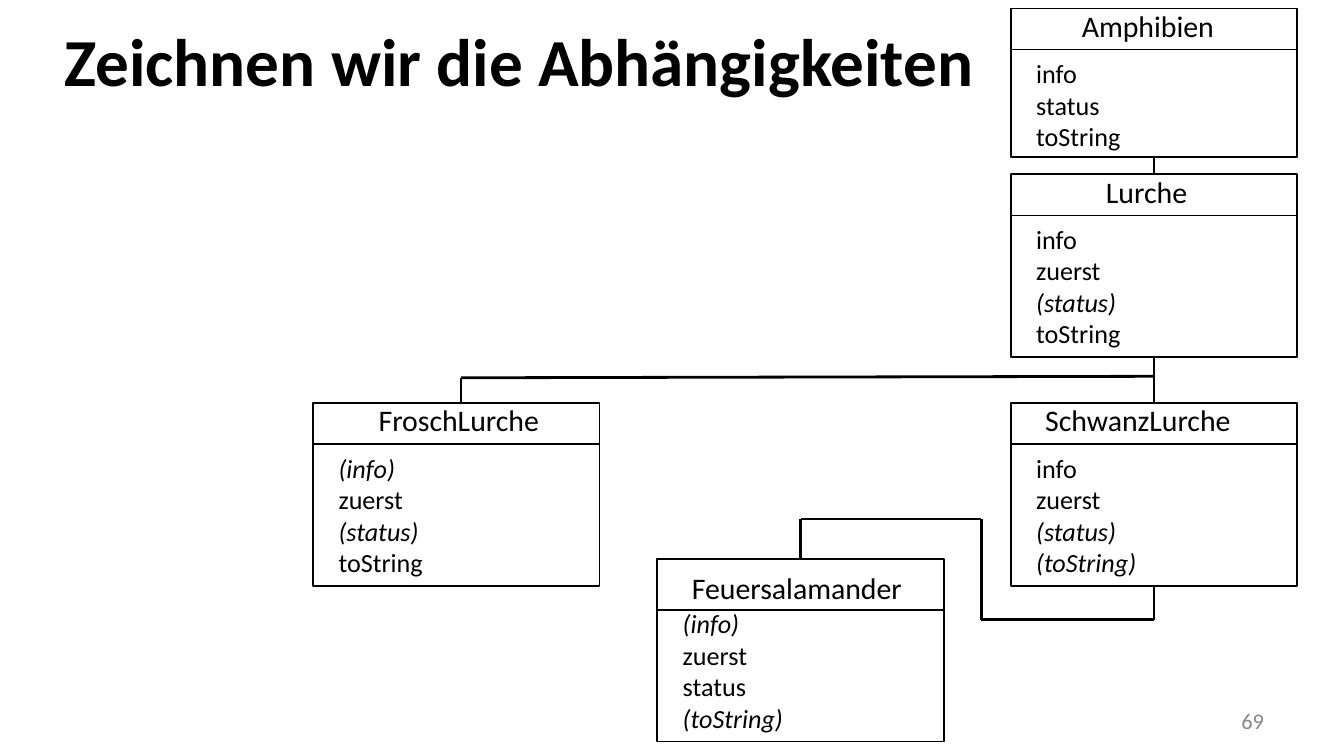
"""Class diagram of the amphibian hierarchy on one slide."""
from dataclasses import dataclass
from itertools import pairwise

import pptx
import pptx.dml.color
import pptx.enum.shapes
import pptx.enum.text
import pptx.oxml.ns
import pptx.util
from lxml import etree

Pt = pptx.util.Pt
Align = pptx.enum.text.PP_ALIGN
Anchor = pptx.enum.text.MSO_ANCHOR
COLORS = {"ink": "000000", "page": "888888"}
WIDTH = 153.4
TOP, BOTTOM = 0, 2


@dataclass
class Node:
    name: str
    left: float
    top: float
    indent: float
    items: list[str]
    height: float = 98
    head: float = 22
    shift: float = -4


def color(key: str):
    return pptx.dml.color.RGBColor.from_string(COLORS[key])


def text(slide, lines: list[str], left: float, top: float, width: float, height: float, *,
         size: float, ink: str = "ink", bold: bool = False, align=Align.LEFT,
         anchor=Anchor.TOP, inset: float = 7.2):
    box = slide.shapes.add_textbox(Pt(left), Pt(top), Pt(width), Pt(height))
    frame = box.text_frame
    frame.word_wrap = True
    frame.vertical_anchor = anchor
    frame.margin_left = frame.margin_right = Pt(inset)
    for i, line in enumerate(lines):
        para = frame.paragraphs[0] if i == 0 else frame.add_paragraph()
        para.alignment = align
        run = para.add_run()
        run.text = line
        run.font.name = "Calibri"
        run.font.size = Pt(size)
        run.font.bold = bold
        run.font.italic = line.startswith("(")
        run.font.color.rgb = color(ink)
    return box


def link(slide, start: tuple, end: tuple, weight: float = 1.5):
    line = slide.shapes.add_connector(
        pptx.enum.shapes.MSO_CONNECTOR.STRAIGHT, *map(Pt, start + end))
    line.line.color.rgb = color("ink")
    line.line.width = Pt(weight)
    etree.SubElement(line._element.spPr, pptx.oxml.ns.qn("a:effectLst"))
    return line


def draw(slide, node: Node):
    rect = slide.shapes.add_shape(
        pptx.enum.shapes.MSO_SHAPE.RECTANGLE,
        Pt(node.left), Pt(node.top), Pt(WIDTH), Pt(node.height))
    rect.shadow.inherit = False
    rect.fill.background()
    rect.line.color.rgb = color("ink")
    rect.line.width = Pt(1)
    rule = node.top + node.head
    link(slide, (node.left, rule), (node.left + WIDTH, rule), 0.75)
    text(slide, [node.name], node.left + node.indent, node.top + node.shift,
         WIDTH - node.indent, 26.6, size=16)
    text(slide, node.items, node.left + 6.5, node.top + 22.8, 80,
         7.2 + 17 * len(node.items), size=14)
    return rect


def main():
    deck = pptx.Presentation()
    deck.slide_width, deck.slide_height = Pt(720), Pt(405)
    slide = deck.slides.add_slide(deck.slide_layouts[6])

    text(slide, ["Zeichnen wir die Abhängigkeiten"], 34.6, 4.3, 648, 55.4,
         size=36, bold=True, anchor=Anchor.MIDDLE, inset=0)
    text(slide, ["69"], 516.2, 375.4, 168, 21.6, size=12, ink="page",
         align=Align.RIGHT, anchor=Anchor.MIDDLE)

    right = 541.5
    nodes = [
        Node("Amphibien", right, 4.6, 31, ["info", "status", "toString"], height=79.4),
        Node("Lurche", right, 93.3, 43.9, ["info", "zuerst", "(status)", "toString"]),
        Node("FroschLurche", 167.8, 215.9, 28, ["(info)", "zuerst", "(status)", "toString"]),
        Node("SchwanzLurche", right, 215.9, 11.3,
             ["info", "zuerst", "(status)", "(toString)"]),
        Node("Feuersalamander", 352.2, 299.3, 11.4,
             ["(info)", "zuerst", "status", "(toString)"], head=27.6, shift=2.2),
    ]
    rects = {node.name: draw(slide, node) for node in nodes}

    mid = right + WIDTH / 2
    for upper, lower in [("Amphibien", "Lurche"), ("Lurche", "SchwanzLurche")]:
        line = link(slide, (mid, 0), (mid, 0))
        line.begin_connect(rects[upper], BOTTOM)
        line.end_connect(rects[lower], TOP)

    link(slide, (247, 202.4), (mid, 201.6))
    link(slide, (247, 202.4), (247, 215.9))

    leaf = 352.2 + WIDTH / 2
    route = [(mid, 313.9), (mid, 332), (525.7, 332), (525.7, 278), (leaf, 278), (leaf, 299.3)]
    legs = [link(slide, *pair) for pair in pairwise(route)]
    legs[0].begin_connect(rects["SchwanzLurche"], BOTTOM)
    legs[-1].end_connect(rects["Feuersalamander"], TOP)

    deck.save("out.pptx")


if __name__ == "__main__":
    main()
